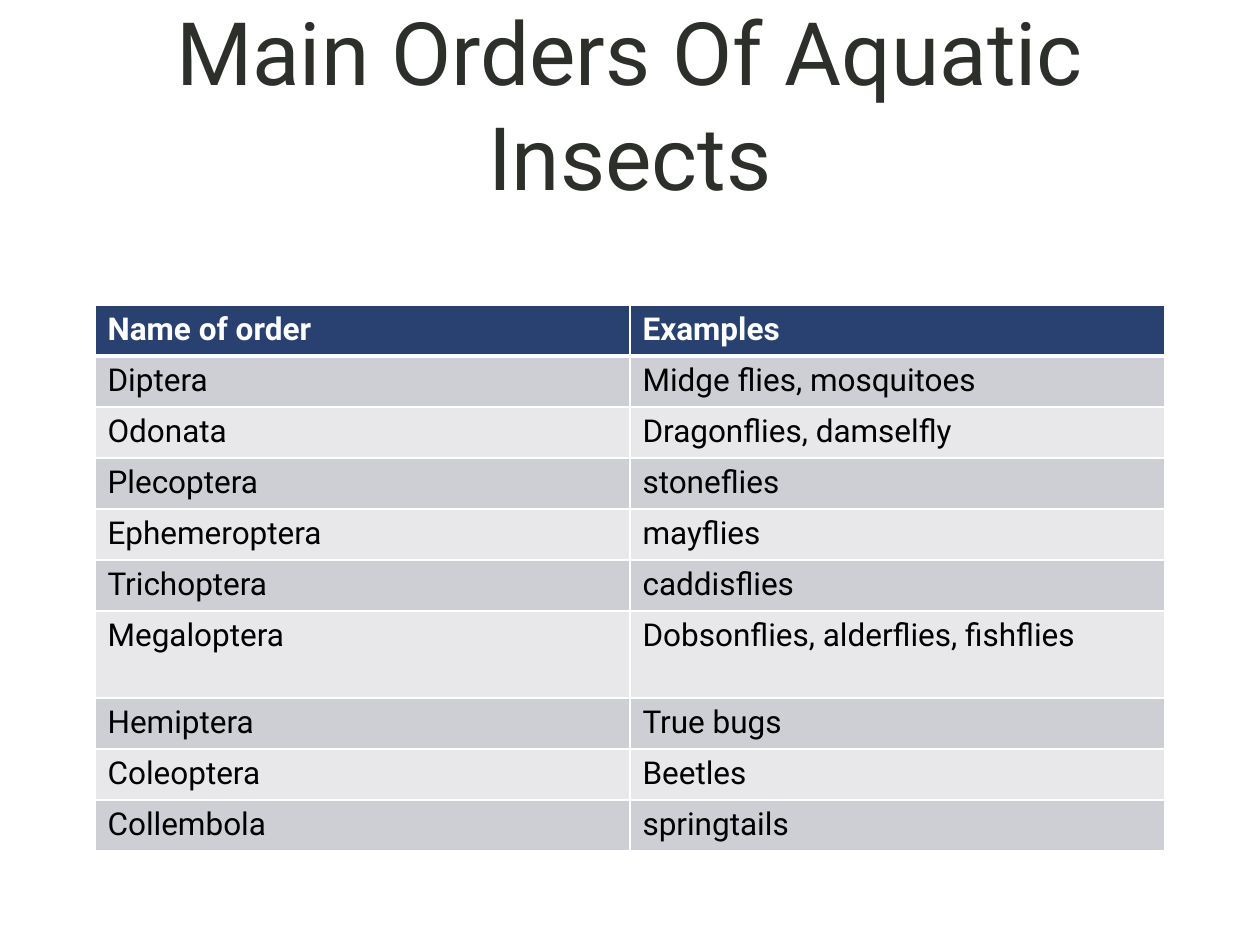
from lxml import etree
from pptx import Presentation
from pptx.dml.color import RGBColor
from pptx.enum.text import MSO_ANCHOR, PP_ALIGN
from pptx.oxml.ns import qn
from pptx.util import Pt

PX = 914400 / 126
MIDDLE = MSO_ANCHOR.MIDDLE
CENTER = PP_ALIGN.CENTER
FONT = "Roboto"
COLORS = {
    "title": "2D2F2B",
    "head": "294171",
    "dark": "CDCFD5",
    "light": "E8E8EB",
    "white": "FFFFFF",
    "black": "000000",
}
ORDERS = [
    ("Name of order", "Examples"),
    ("Diptera", "Midge flies, mosquitoes"),
    ("Odonata", "Dragonflies, damselfly"),
    ("Plecoptera", "stoneflies"),
    ("Ephemeroptera", "mayflies"),
    ("Trichoptera", "caddisflies"),
    ("Megaloptera", "Dobsonflies, alderflies, fishflies"),
    ("Hemiptera", "True bugs"),
    ("Coleoptera", "Beetles"),
    ("Collembola", "springtails"),
]
ROW = 51
TALL = 87


def px(*sizes):
    """Turn pixel lengths into EMU."""
    return [round(size * PX) for size in sizes]


def style(para, size, color, bold=False):
    """Set the font of a whole paragraph."""
    font = para.font
    font.name, font.size, font.bold = FONT, Pt(size), bold
    font.color.rgb = RGBColor.from_string(COLORS[color])


def add_title(slide, box, text):
    """Place the centred slide title in the box."""
    frame = slide.shapes.add_textbox(*px(*box)).text_frame
    frame.word_wrap = True
    frame.vertical_anchor = MIDDLE
    para = frame.paragraphs[0]
    para.text = text
    para.alignment = CENTER
    style(para, 50, "title")


def add_edges(cell, top, bottom):
    """Draw white cell borders, with top and bottom widths in points."""
    props = cell._tc.get_or_add_tcPr()
    for side, width in (("L", 1), ("R", 1), ("T", top), ("B", bottom)):
        line = etree.SubElement(props, qn(f"a:ln{side}"), w=str(Pt(width)))
        fill = etree.SubElement(line, qn("a:solidFill"))
        etree.SubElement(fill, qn("a:srgbClr"), val=COLORS["white"])


def add_orders(slide, box, rows):
    """Place the banded table of orders in the box."""
    count = len(rows[0])
    table = slide.shapes.add_table(len(rows), count, *px(*box)).table
    for col in table.columns:
        col.width = px(box[2] / count)[0]
    for i, texts in enumerate(rows):
        head = i == 0
        band = "head" if head else "dark" if i % 2 else "light"
        table.rows[i].height = px(TALL if texts[0] == "Megaloptera" else ROW)[0]
        for cell, text in zip(table.rows[i].cells, texts):
            add_edges(cell, 3 if i == 1 else 1, 3 if head else 1)
            cell.fill.solid()
            cell.fill.fore_color.rgb = RGBColor.from_string(COLORS[band])
            cell.text = text
            para = cell.text_frame.paragraphs[0]
            style(para, 18, "white" if head else "black", head)


def main():
    """Build and save the slide."""
    deck = Presentation()
    deck.slide_width, deck.slide_height = px(1260, 945)
    slide = deck.slides.add_slide(deck.slide_layouts[6])
    add_title(slide, (95, 9, 1070, 189), "Main Orders Of Aquatic Insects")
    add_orders(slide, (95, 305, 1070, 9 * ROW + TALL), ORDERS)
    deck.save("out.pptx")


if __name__ == "__main__":
    main()
